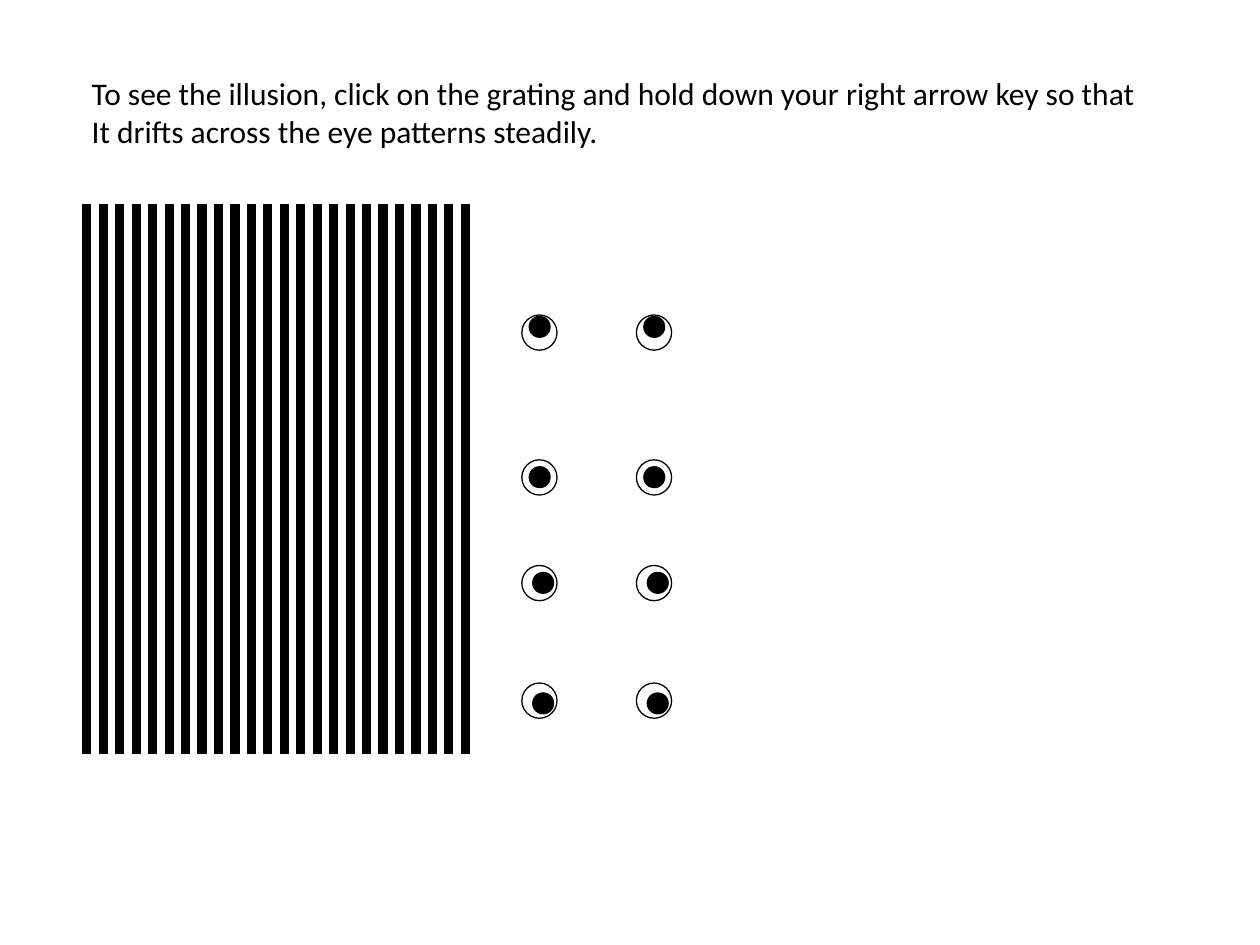
"""Build the slide with a drifting grating and four pairs of eyes."""
import pptx
import pptx.dml.color
import pptx.enum.shapes
import pptx.enum.text
import pptx.util

Cm = pptx.util.Cm
Pt = pptx.util.Pt
MSO_SHAPE = pptx.enum.shapes.MSO_SHAPE
BLACK = pptx.dml.color.RGBColor(0, 0, 0)

EYE_SIZE = 0.71
PUPIL_SIZE = 0.42
EYE_LEFTS = (10.52, 12.83)

BAR_COUNT = 24
BAR_LENGTH = 11.07
BAR_THICKNESS = 0.16
GRATING_MIDDLE = 9.66
FIRST_BAR_CENTRE = 9.38
LAST_BAR_CENTRE = 1.75

INSTRUCTIONS = (
    "To see the illusion, click on the grating and hold down your right arrow key so that",
    "It drifts across the eye patterns steadily.",
)


def add_outlined(shapes, kind, left, top, width, height, filled=True):
    """Add a black-outlined shape, filled black or left open."""
    s = shapes.add_shape(kind, Cm(left), Cm(top), Cm(width), Cm(height))
    s.shadow.inherit = False
    if filled:
        s.fill.solid()
        s.fill.fore_color.rgb = BLACK
    else:
        s.fill.background()
    s.line.color.rgb = BLACK
    s.line.width = Pt(0.75)
    return s


def add_eye_pair(shapes, top, dx, dy):
    """Add two eyes whose pupils are shifted by dx, dy inside them."""
    for left in EYE_LEFTS:
        add_outlined(shapes, MSO_SHAPE.OVAL, left, top, EYE_SIZE, EYE_SIZE, filled=False)
        add_outlined(shapes, MSO_SHAPE.OVAL, left + dx, top + dy, PUPIL_SIZE, PUPIL_SIZE)


def add_grating(shapes):
    """Add the group of evenly spaced vertical bars, from right to left."""
    group = shapes.add_group_shape()
    pitch = (LAST_BAR_CENTRE - FIRST_BAR_CENTRE) / (BAR_COUNT - 1)
    for i in range(BAR_COUNT):
        left = FIRST_BAR_CENTRE + i * pitch - BAR_LENGTH / 2
        top = GRATING_MIDDLE - BAR_THICKNESS / 2
        bar = add_outlined(group.shapes, MSO_SHAPE.RECTANGLE, left, top, BAR_LENGTH, BAR_THICKNESS)
        bar.rotation = 90


def add_instructions(shapes):
    """Add the instruction text, one paragraph a line."""
    tf = shapes.add_textbox(Cm(1.6), Cm(1.37), Cm(21.89), Cm(1.8)).text_frame
    tf.word_wrap = False
    tf.auto_size = pptx.enum.text.MSO_AUTO_SIZE.SHAPE_TO_FIT_TEXT
    tf.text = "\n".join(INSTRUCTIONS)
    for p in tf.paragraphs:
        p.font.name = "Calibri"
        p.font.size = Pt(18)
        p.font.color.rgb = BLACK


def main():
    """Build and save the presentation."""
    prs = pptx.Presentation()
    prs.slide_width, prs.slide_height = Cm(25.4), Cm(19.05)
    shapes = prs.slides.add_slide(prs.slide_layouts[6]).shapes
    add_eye_pair(shapes, 9.27, 0.15, 0.14)
    add_eye_pair(shapes, 6.35, 0.15, 0.03)
    add_eye_pair(shapes, 11.4, 0.22, 0.14)
    add_grating(shapes)
    add_instructions(shapes)
    add_eye_pair(shapes, 13.77, 0.22, 0.2)
    prs.save("out.pptx")


if __name__ == "__main__":
    main()
